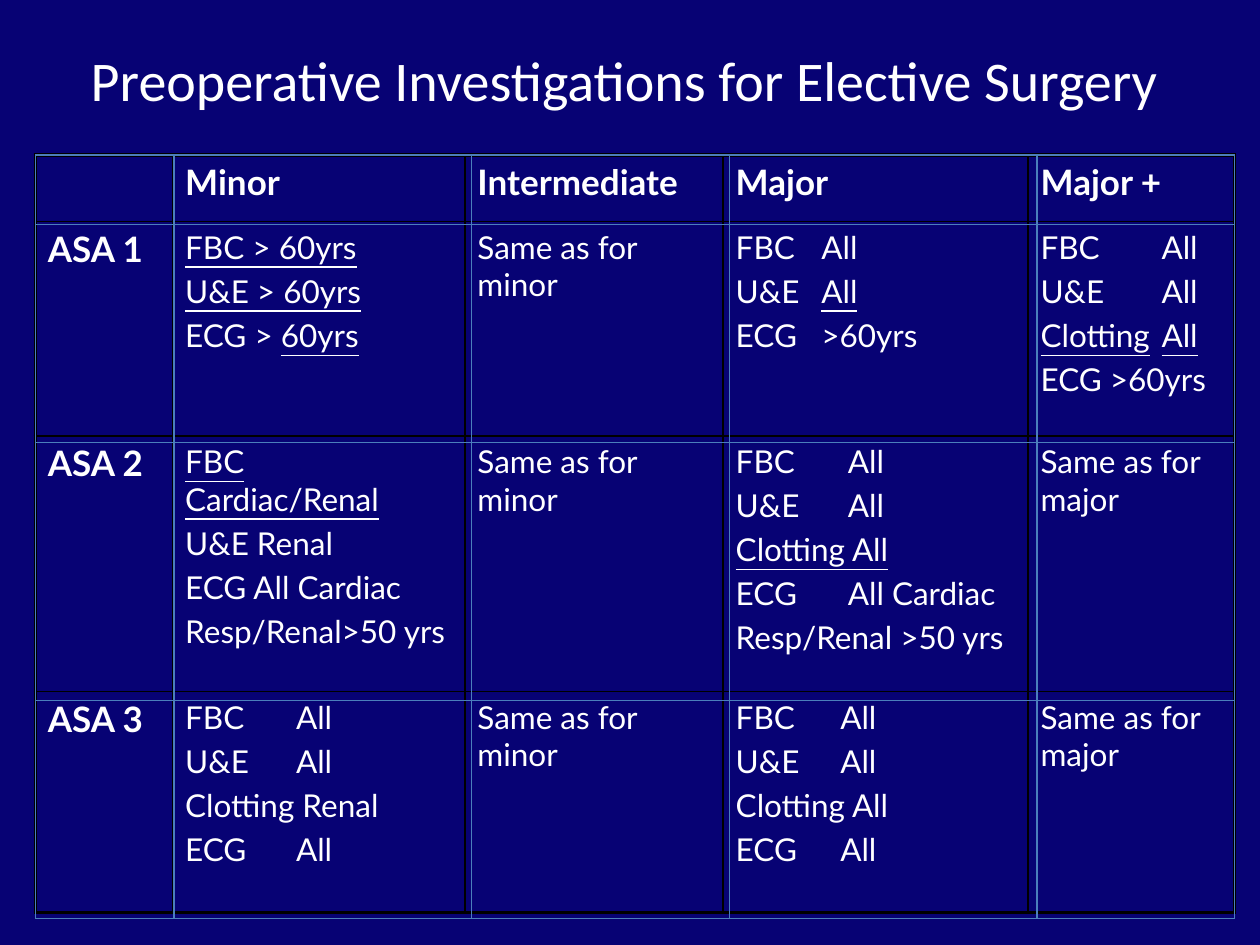
from dataclasses import dataclass

from lxml import etree
from pptx import Presentation
from pptx.dml.color import RGBColor
from pptx.enum import shapes, text
from pptx.oxml import ns
from pptx.util import Inches, Pt


@dataclass(frozen=True)
class Theme:
    """Colours, fonts and type sizes of the slide."""
    background: str = "070274"
    ink: str = "FFFFFF"
    border: str = "000000"
    rule: str = "4B7EBC"
    title_font: str = "Calibri"
    table_font: str = "Lato"
    title_size: float = 32
    head_size: float = 20
    body_size: float = 18
    inner: float = 1
    outer: float = 2.25
    rule_width: float = 0.75


THEME = Theme()
TITLE = "Preoperative Investigations for Elective Surgery"
TITLE_BOX = (0.62, 0.31, 8.75, 0.64)
TABLE_BOX = (0.28, 1.23, 9.52, 6.01)
RULE_BOX = (0.28, 1.23, 9.52, 6.06)
COL_WIDTHS = (1.09, 2.32, 2.05, 2.42, 1.64)
ROW_HEIGHTS = (0.53, 1.7, 2.03, 1.75)
RULE_XS = (0, 1.1, 3.46, 5.51, 7.95, 9.52)
RULE_YS = (0, 0.55, 2.28, 4.33, 6.06)

HEADINGS = ("", "Minor", "Intermediate", "Major", "Major +")
LIKE_MINOR = ["Same as for minor"]
LIKE_MAJOR = ["Same as for major"]
ROWS = (
    ("ASA 1",
     ["_FBC > 60yrs_", "_U&E > 60yrs_", "ECG > _60yrs_"],
     LIKE_MINOR,
     ["FBC\tAll", "U&E\t_All_", "ECG\t>60yrs"],
     ["FBC\tAll", "U&E\tAll", "_Clotting\tAll_", "ECG >60yrs"]),
    ("ASA 2",
     ["_FBC\nCardiac/Renal_", "U&E Renal", "ECG All Cardiac", "Resp/Renal>50 yrs"],
     LIKE_MINOR,
     ["FBC\tAll", "U&E\tAll", "_Clotting All_", "ECG\tAll Cardiac",
      "Resp/Renal >50 yrs"],
     LIKE_MAJOR),
    ("ASA 3",
     ["FBC\tAll", "U&E\tAll", "Clotting Renal", "ECG\tAll"],
     LIKE_MINOR,
     ["FBC\tAll", "U&E\tAll", "Clotting All", "ECG\tAll"],
     LIKE_MAJOR),
)
TAB_STOPS = {(1, 3): 0.68, (1, 4): 0.96, (2, 3): 0.89, (3, 1): 0.88, (3, 3): 0.83}


def inches(values):
    """Convert a sequence of numbers to inch lengths."""
    return [Inches(v) for v in values]


def style_font(font, **values):
    """Apply a dict of values and the ink colour to a font."""
    for name, value in values.items():
        setattr(font, name, value)
    font.color.rgb = RGBColor.from_string(THEME.ink)


def add_title(s, box):
    """Place the title placeholder in the given box."""
    sp = s.shapes.title
    sp.left, sp.top, sp.width, sp.height = inches(box)
    tf = sp.text_frame
    tf.word_wrap = True
    tf.auto_size = text.MSO_AUTO_SIZE.NONE
    tf.vertical_anchor = text.MSO_ANCHOR.TOP
    p = tf.paragraphs[0]
    p.alignment = text.PP_ALIGN.LEFT
    r = p.add_run()
    r.text = TITLE
    style_font(r.font, name=THEME.title_font, size=Pt(THEME.title_size))


def set_borders(cell, widths):
    """Draw the left, right, top and bottom borders of a cell."""
    tc_pr = cell._tc.get_or_add_tcPr()
    for i, (side, width) in enumerate(zip("LRTB", widths)):
        ln = etree.Element(ns.qn(f"a:ln{side}"), w=str(Pt(width)))
        fill = etree.SubElement(ln, ns.qn("a:solidFill"))
        etree.SubElement(fill, ns.qn("a:srgbClr"), val=THEME.border)
        tc_pr.insert(i, ln)


def fill_paragraph(p, line, size, bold, stop):
    """Write one line, underlining the parts between underscores."""
    p.space_before = Pt(size * 0.2)
    if stop and "\t" in line:
        tabs = etree.SubElement(p._p.get_or_add_pPr(), ns.qn("a:tabLst"))
        etree.SubElement(tabs, ns.qn("a:tab"), pos=str(Inches(stop)), algn="l")
    for i, part in enumerate(line.split("_")):
        for j, piece in enumerate(part.split("\n")):
            if j:
                p.add_line_break()
            if piece:
                r = p.add_run()
                r.text = piece
                style_font(r.font, name=THEME.table_font, size=Pt(size),
                           bold=bold, underline=i % 2 == 1)


def add_grid(s, box):
    """Place the investigations table in the given box."""
    n_rows, n_cols = len(ROW_HEIGHTS), len(COL_WIDTHS)
    table = s.shapes.add_table(n_rows, n_cols, *inches(box)).table
    table.first_row = table.horz_banding = False
    for col, width in zip(table.columns, COL_WIDTHS):
        col.width = Inches(width)
    for row, height in zip(table.rows, ROW_HEIGHTS):
        row.height = Inches(height)
    for i, entries in enumerate((HEADINGS, *ROWS)):
        for j, entry in enumerate(entries):
            cell = table.cell(i, j)
            cell.fill.background()
            edges = (j == 0, j == n_cols - 1, i == 0, i == n_rows - 1)
            set_borders(cell, [THEME.outer if e else THEME.inner for e in edges])
            heading = isinstance(entry, str)
            size = THEME.head_size if heading else THEME.body_size
            tf = cell.text_frame
            for k, line in enumerate([entry] if heading else entry):
                p = tf.add_paragraph() if k else tf.paragraphs[0]
                fill_paragraph(p, line, size, heading, TAB_STOPS.get((i, j)))


def add_rules(s, box):
    """Lay the blue rules across the given box."""
    left, top, width, height = box
    ends = [(left + x, top, left + x, top + height) for x in RULE_XS]
    ends += [(left, top + y, left + width, top + y) for y in RULE_YS]
    for end in ends:
        line = s.shapes.add_connector(shapes.MSO_CONNECTOR.STRAIGHT, *inches(end))
        line.line.color.rgb = RGBColor.from_string(THEME.rule)
        line.line.width = Pt(THEME.rule_width)
        etree.SubElement(line._element.spPr, ns.qn("a:effectLst"))


def main():
    """Build and save the slide."""
    prs = Presentation()
    prs.slide_width, prs.slide_height = inches((10, 7.5))
    s = prs.slides.add_slide(prs.slide_layouts[5])
    s.background.fill.solid()
    s.background.fill.fore_color.rgb = RGBColor.from_string(THEME.background)
    add_grid(s, TABLE_BOX)
    add_title(s, TITLE_BOX)
    add_rules(s, RULE_BOX)
    prs.save("out.pptx")


if __name__ == "__main__":
    main()
